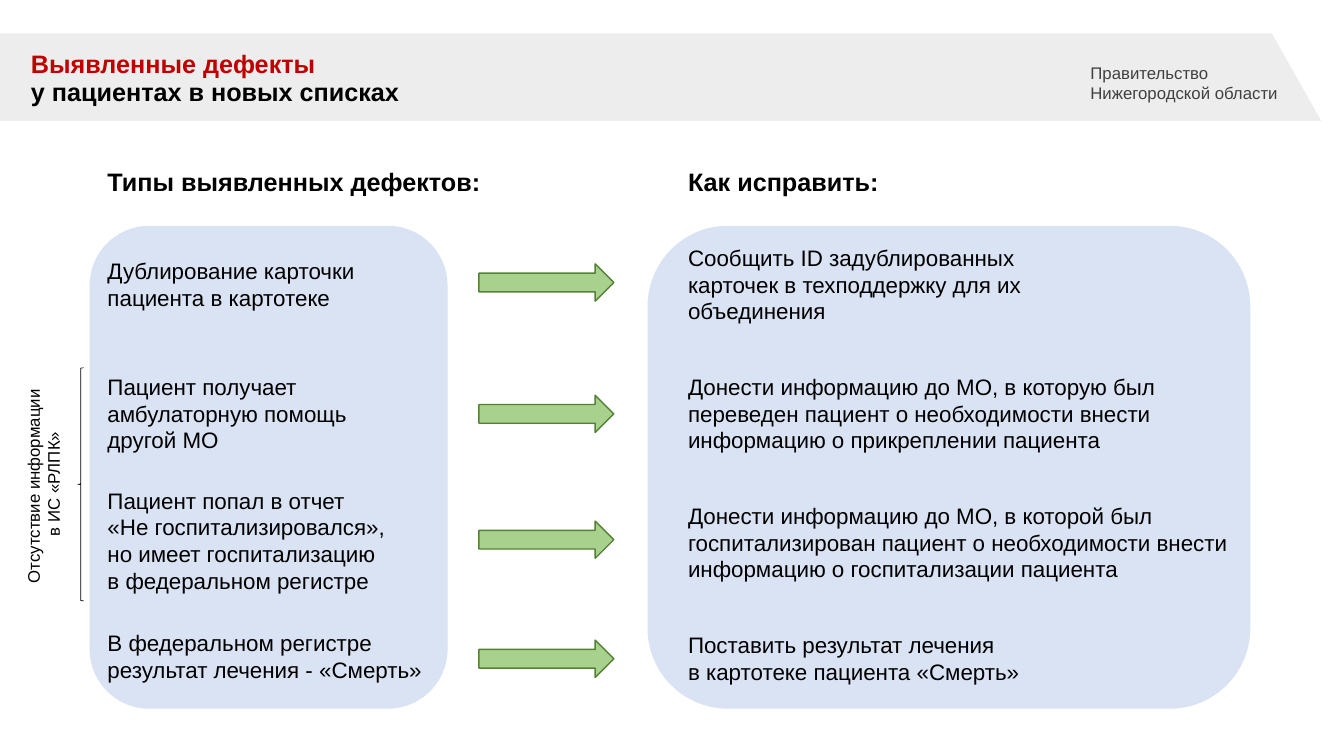
from dataclasses import dataclass

from lxml import etree
from pptx import Presentation
from pptx import util as u
from pptx.dml import color
from pptx.enum import shapes, text
from pptx.oxml import ns

LEFT_TEXT, RIGHT_TEXT = 2.46, 17.09
ARROW_LEFT, ARROW_WIDTH, ARROW_HEIGHT = 12.07, 3.4, 0.94
PANEL_TOP, PANEL_HEIGHT = 5.69, 12.17


@dataclass
class Label:
    """A text box in centimetres; \\v breaks a line, \\n starts a paragraph."""
    words: str
    left: float
    top: float
    width: float
    height: float
    size: int = 16
    bold: bool = False
    colors: tuple[str, ...] = ("000000",)
    spacing: float = 1.0
    centered: bool = False
    rotation: int = 0


@dataclass
class Defect:
    """A defect, the arrow beside it and its remedy."""
    problem: str
    problem_top: float
    problem_width: float
    problem_height: float
    arrow_top: float
    remedy: str
    remedy_top: float
    remedy_width: float
    remedy_height: float


def rgb(value: str) -> color.RGBColor:
    return color.RGBColor.from_string(value)


def paint(shape, fill: str | None, line: str | None = None, width: float = 1) -> None:
    shape.shadow.inherit = False
    if fill:
        shape.fill.solid()
        shape.fill.fore_color.rgb = rgb(fill)
    else:
        shape.fill.background()
    if line:
        shape.line.color.rgb = rgb(line)
        shape.line.width = u.Pt(width)
    else:
        shape.line.fill.background()


def draw_shape(slide, preset, left: float, top: float, width: float, height: float,
               fill: str | None, line: str | None = None, line_width: float = 1) -> None:
    shape = slide.shapes.add_shape(preset, *map(u.Cm, (left, top, width, height)))
    paint(shape, fill, line, line_width)


def draw_label(slide, label: Label) -> None:
    box = slide.shapes.add_textbox(
        *map(u.Cm, (label.left, label.top, label.width, label.height)))
    box.rotation = label.rotation
    frame = box.text_frame
    frame.word_wrap = True
    frame.text = label.words
    font_format = {"name": "Arial", "size": u.Pt(label.size), "bold": label.bold}
    for paragraph in frame.paragraphs:
        paragraph.line_spacing = label.spacing
        if label.centered:
            paragraph.alignment = text.PP_ALIGN.CENTER
        for index, run in enumerate(paragraph.runs):
            for attribute, value in font_format.items():
                setattr(run.font, attribute, value)
            run.font.color.rgb = rgb(label.colors[index % len(label.colors)])
        # Line breaks take the size of their text
        for line_break in paragraph._p.findall(ns.qn("a:br")):
            etree.SubElement(line_break, ns.qn("a:rPr"), sz=str(label.size * 100))


def draw_header(slide) -> None:
    outline = [(33.3, 3.05), (32.05, 0.84), (0, 0.84), (0, 3.05)]
    corners = [(u.Cm(x), u.Cm(y)) for x, y in outline]
    builder = slide.shapes.build_freeform(*corners[0])
    builder.add_line_segments(corners[1:], close=True)
    band = builder.convert_to_shape()
    paint(band, "D9D9D9")
    tint = band._element.spPr.find(ns.qn("a:solidFill"))[0]
    etree.SubElement(tint, ns.qn("a:alpha"), val="45000")


HEADINGS = [
    Label("Правительство Нижегородской области", 27.23, 1.45, 5.41, 1.24,
          size=12, colors=("404040",)),
    Label("Выявленные дефекты \vу пациентах в новых списках", 0.53, 1.19, 17.65, 1.65,
          size=18, bold=True, colors=("C00000", "000000"), spacing=0.9),
    Label("Типы выявленных дефектов:", LEFT_TEXT, 4.14, 10.41, 0.94,
          size=18, bold=True, spacing=0.9),
    Label("Как исправить:", RIGHT_TEXT, 4.14, 10.24, 0.94,
          size=18, bold=True, spacing=0.9),
]

DEFECTS = [
    Defect("Дублирование карточки пациента в картотеке", 6.35, 7.29, 1.63, 6.65,
           "Сообщить ID задублированных карточек в техподдержку для их объединения",
           6.02, 9.02, 2.31),
    Defect("Пациент получает амбулаторную помощь другой МО", 9.27, 7.29, 2.31, 9.96,
           "Донести информацию до МО, в которую был переведен пациент "
           "о необходимости внести информацию о прикреплении пациента",
           9.27, 14.48, 2.31),
    Defect("Пациент попал в отчет \v«Не госпитализировался»,\v"
           "но имеет госпитализацию в федеральном регистре", 12.14, 7.67, 3, 13.13,
           "Донести информацию до МО, в которой был госпитализирован пациент "
           "о необходимости внести информацию о госпитализации пациента",
           12.52, 15.65, 2.31),
    Defect("В федеральном регистре\nрезультат лечения - «Смерть»", 15.72, 9.02, 1.63, 16.13,
           "Поставить результат лечения \vв картотеке пациента «Смерть»",
           15.77, 9.5, 1.63),
]

MISSING_INFO = Label("Отсутствие информации \vв ИС «РЛПК»", -2.01, 11.56, 6.2, 1.27,
                     size=12, centered=True, rotation=270)


def main() -> None:
    deck = Presentation()
    deck.slide_width, deck.slide_height = u.Cm(33.87), u.Cm(19.05)
    slide = deck.slides.add_slide(deck.slide_layouts[6])
    preset = shapes.MSO_SHAPE

    # Header and column headings
    draw_header(slide)
    for heading in HEADINGS:
        draw_label(slide, heading)

    # Panels behind the two columns
    for left, width in ((16.32, 15.19), (2.26, 9.02)):
        draw_shape(slide, preset.ROUNDED_RECTANGLE, left, PANEL_TOP, width, PANEL_HEIGHT,
                   "DAE3F3")

    # Defects, arrows and remedies
    for row in DEFECTS:
        draw_label(slide, Label(row.problem, LEFT_TEXT, row.problem_top,
                                row.problem_width, row.problem_height))
        draw_shape(slide, preset.RIGHT_ARROW, ARROW_LEFT, row.arrow_top,
                   ARROW_WIDTH, ARROW_HEIGHT, "A9D18E", "548235")
        draw_label(slide, Label(row.remedy, RIGHT_TEXT, row.remedy_top,
                                row.remedy_width, row.remedy_height))

    # Side note with its brace
    draw_label(slide, MISSING_INFO)
    draw_shape(slide, preset.LEFT_BRACE, 1.96, 9.27, 0.15, 5.87, None, "000000", 0.5)

    deck.save("out.pptx")


if __name__ == "__main__":
    main()
